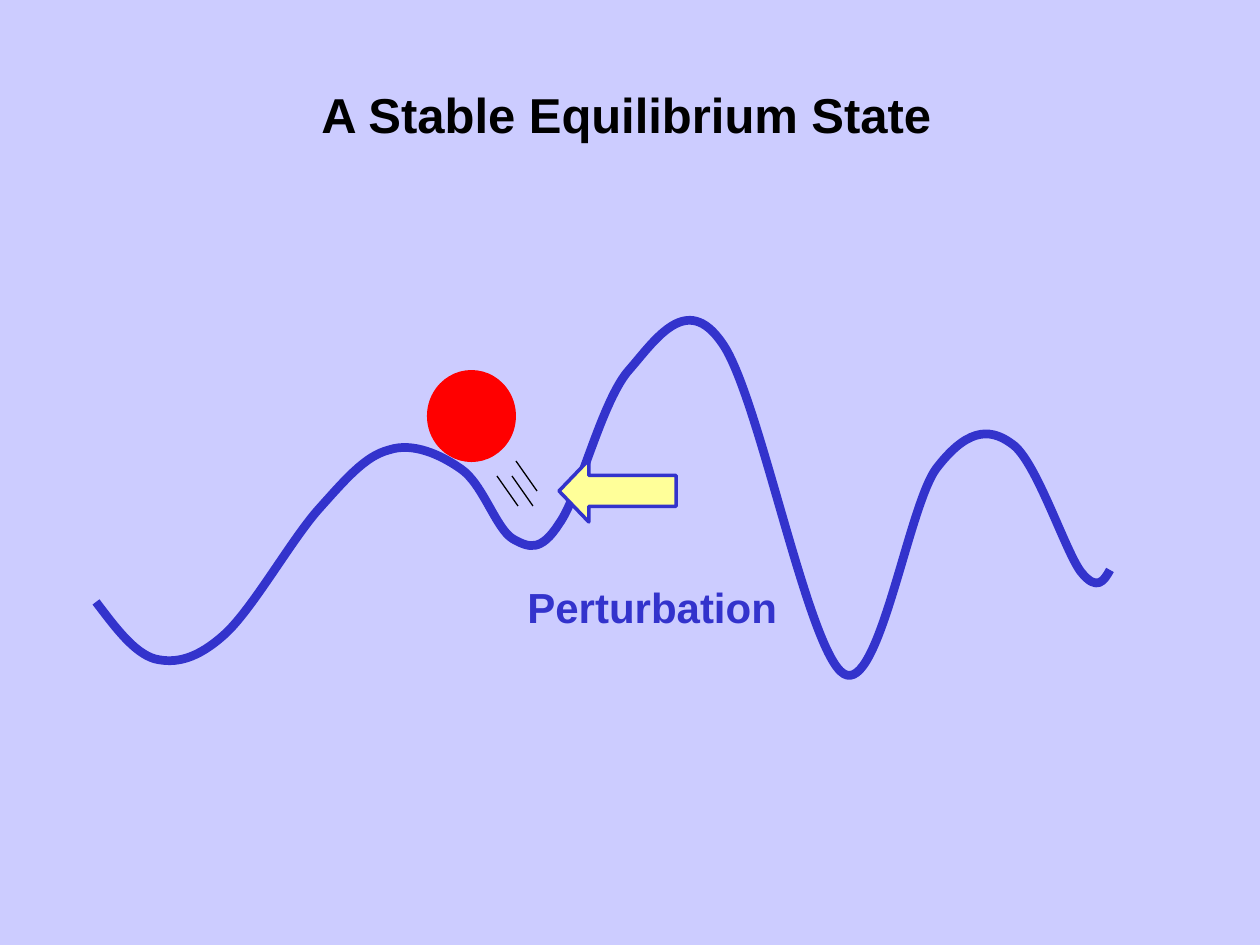
from lxml.etree import SubElement
from pptx import Presentation
from pptx.dml.color import RGBColor
from pptx.enum.shapes import MSO_CONNECTOR, MSO_SHAPE
from pptx.enum.text import MSO_AUTO_SIZE, PP_ALIGN
from pptx.oxml.ns import qn
from pptx.util import Pt

PX = 914400 / 126
COLORS = {
    "background": "CCCCFF",
    "title": "000000",
    "curve": "3333CC",
    "ball": "FF0000",
    "arrow": "FFFF99",
    "motion": "000000",
}
CURVE_START = (0, 310)
# Each segment holds two control points and an end point.
CURVE_SEGMENTS = [
    [(19, 335), (38, 361), (59, 367)],
    [(80, 372), (101, 367), (128, 343)],
    [(156, 318), (194, 250), (222, 218)],
    [(249, 188), (269, 164), (293, 158)],
    [(317, 150), (345, 163), (365, 177)],
    [(387, 192), (400, 237), (417, 247)],
    [(433, 256), (445, 260), (463, 232)],
    [(484, 203), (506, 107), (534, 77)],
    [(560, 47), (591, 0), (626, 51)],
    [(663, 102), (712, 361), (748, 382)],
    [(783, 402), (812, 216), (840, 177)],
    [(869, 139), (892, 134), (916, 152)],
    [(940, 168), (969, 259), (985, 280)],
    [(1001, 300), (1008, 289), (1014, 278)],
]
MOTION_STARTS = [(0, 15), (15, 15), (19, 0)]
MOTION_STROKE = (21, 30)


def emu(*lengths):
    return [round(length * PX) for length in lengths]


def color(name):
    return RGBColor.from_string(COLORS[name])


def paint(shape, fill=None, line=None, width=0):
    shape.shadow.inherit = False
    if fill:
        shape.fill.solid()
        shape.fill.fore_color.rgb = color(fill)
    else:
        shape.fill.background()
    if line:
        shape.line.color.rgb = color(line)
        shape.line.width = Pt(width)
    else:
        shape.line.fill.background()


def add_label(slide, box, text, size, ink, fill=None):
    label = slide.shapes.add_textbox(*emu(*box))
    if fill:
        label.fill.solid()
        label.fill.fore_color.rgb = color(fill)
    frame = label.text_frame
    frame.word_wrap = False
    frame.auto_size = MSO_AUTO_SIZE.SHAPE_TO_FIT_TEXT
    paragraph = frame.paragraphs[0]
    paragraph.alignment = PP_ALIGN.LEFT
    run = paragraph.add_run()
    run.text = text
    for key, value in {"name": "Arial", "size": Pt(size), "bold": True}.items():
        setattr(run.font, key, value)
    run.font.color.rgb = color(ink)


def add_landscape(slide, left, top):
    """Draw the smooth curve of hills and valleys from its Bezier segments."""
    builder = slide.shapes.build_freeform(*CURVE_START, scale=PX)
    for segment in CURVE_SEGMENTS:
        builder.add_line_segments(segment, close=False)
    curve = builder.convert_to_shape(*emu(left, top))
    path = next(curve.element.iter(qn("a:path")))
    lines = path.findall(qn("a:lnTo"))
    for first in range(0, len(lines), 3):
        bezier = SubElement(path, qn("a:cubicBezTo"))
        for line in lines[first:first + 3]:
            bezier.append(line[0])
            path.remove(line)
    paint(curve, line="curve", width=5)


def add_ball(slide, *box):
    paint(slide.shapes.add_shape(MSO_SHAPE.OVAL, *emu(*box)), fill="ball")


def add_push_arrow(slide, *box):
    arrow = slide.shapes.add_shape(MSO_SHAPE.LEFT_ARROW, *emu(*box))
    arrow.adjustments[0] = 0.5
    arrow.adjustments[1] = 0.48
    paint(arrow, fill="arrow", line="curve", width=2)


def add_motion_lines(slide, left, top):
    width, height = MOTION_STROKE
    for dx, dy in MOTION_STARTS:
        x, y = left + dx, top + dy
        stroke = slide.shapes.add_connector(
            MSO_CONNECTOR.STRAIGHT, *emu(x, y, x + width, y + height))
        stroke.line.color.rgb = color("motion")
        stroke.line.width = Pt(0.75)
        SubElement(stroke.element.spPr, qn("a:effectLst"))


def add_equilibrium(slide, left, top):
    """Place the landscape, ball and perturbation relative to the corner."""
    add_landscape(slide, left, top)
    add_ball(slide, left + 331, top + 78, 89, 92)
    add_push_arrow(slide, left + 463, top + 168, 117, 62)
    add_motion_lines(slide, left + 401, top + 169)
    add_label(slide, (left + 419, top + 283, 275, 63), "Perturbation", 24,
              "curve", fill="background")


def main():
    deck = Presentation()
    deck.slide_width, deck.slide_height = emu(1260, 945)
    slide = deck.slides.add_slide(deck.slide_layouts[6])
    slide.background.fill.solid()
    slide.background.fill.fore_color.rgb = color("background")
    add_label(slide, (309, 78, 638, 72), "A Stable Equilibrium State", 28, "title")
    add_equilibrium(slide, 96, 292)
    deck.save("out.pptx")


if __name__ == "__main__":
    main()
